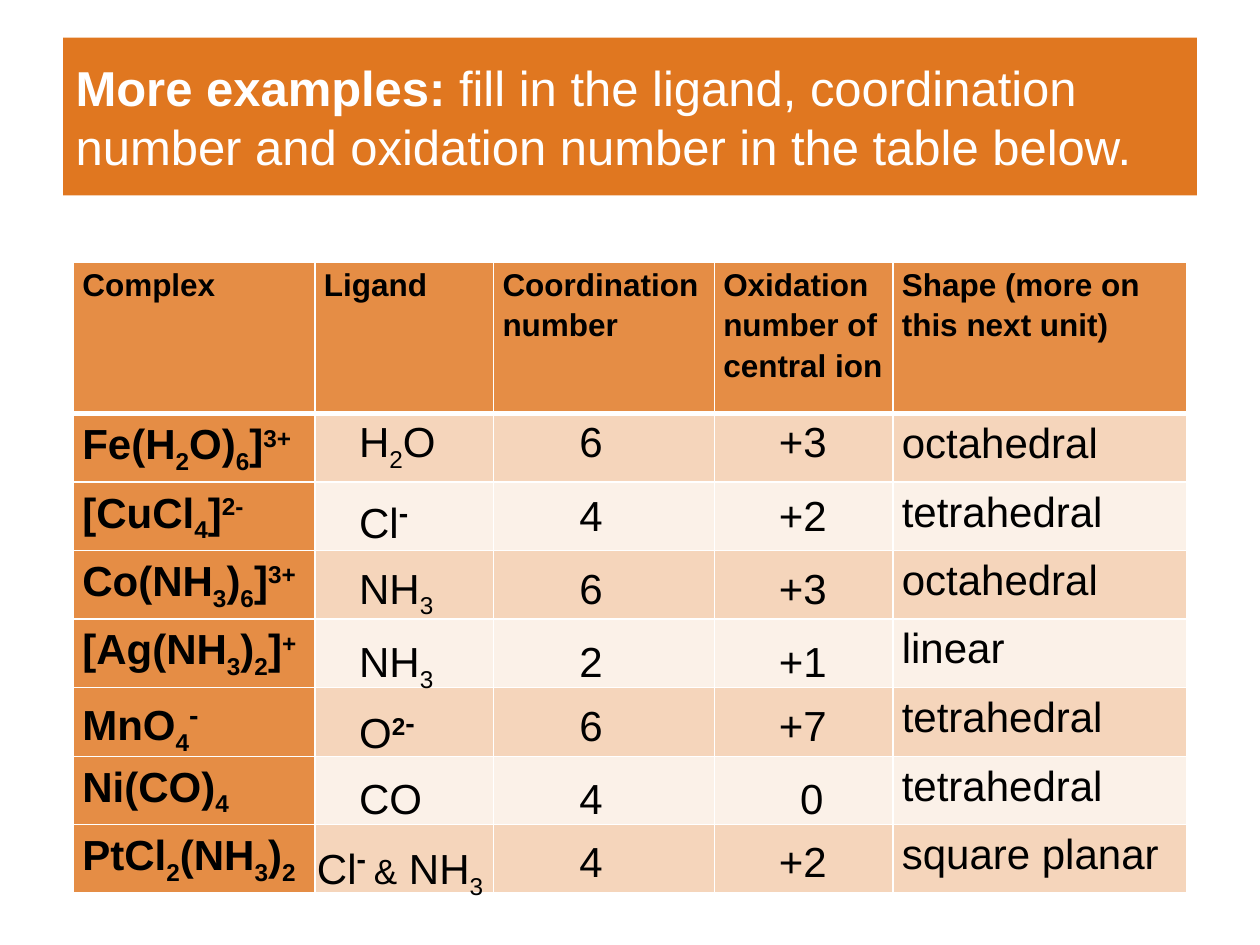
from dataclasses import dataclass

from lxml.etree import Element, SubElement
from pptx import Presentation
from pptx.dml.color import RGBColor as Rgb
from pptx.enum.text import MSO_ANCHOR as Anchor, MSO_AUTO_SIZE as Fit, PP_ALIGN as Align
from pptx.oxml.ns import qn
from pptx.util import Cm, Pt


@dataclass(frozen=True)
class Theme:
    font: str = "Arial"
    accent: str = "E07720"
    white: str = "FFFFFF"
    black: str = "000000"
    title: int = 28
    head: int = 18
    body: int = 24
    sign: int = 28
    small: int = 20
    strong: int = 83
    bands: tuple = (30, 10)


THEME = Theme()
# Marks that open a piece of a formula: size, bold, baseline shift in percent
MARKS = {
    "_": (THEME.body, None, -25),
    "^": (THEME.body, True, 30),
    "~": (THEME.sign, True, 30),
    "<": (THEME.small, None, 0),
}
HEADS = ["Complex", "Ligand", "Coordination number",
         "Oxidation number of central ion",
         "Shape (more on\nthis next unit)"]
# Complex, ligand, coordination number, oxidation number, shape
ROWS = [
    ("Fe(H|_2|O)|_6|]|^3+", "H|_2|O", "6", "+3", "octahedral"),
    ("[CuCl|_4|]|^2-", "Cl|~-", "4", "+2", "tetrahedral"),
    ("Co(NH|_3|)|_6|]|^3+", "NH|_3", "6", "+3", "octahedral"),
    ("[Ag(NH|_3|)|_2|]|^+", "NH|_3", "2", "+1", "linear"),
    ("MnO|_4|~-", "O|^2|~-", "6", "+7", "tetrahedral"),
    ("Ni(CO)|_4", "CO", "4", "0", "tetrahedral"),
    ("PtCl|_2|(NH|_3|)|_2", "Cl|~- |<&| NH|_3", "4", "+2", "square planar"),
]
WIDTHS = [4.87, 3.6, 4.45, 3.6, 5.92]
HEAD_H, ROW_H = 3.05, 1.38
TOPS = [8.26, 9.74, 11.21, 12.69, 13.97, 15.45, 16.72]


def style(run, size, bold=False, color=THEME.black, shift=0):
    font = run.font
    font.name, font.size, font.bold = THEME.font, Pt(size), bold
    font.color.rgb = Rgb.from_string(color)
    if shift:
        run._r.get_or_add_rPr().set("baseline", str(shift * 1000))


def write(para, text, size=THEME.body, bold=False):
    """Add the pieces between bars, each styled by its leading mark."""
    for piece in text.split("|"):
        mark = MARKS.get(piece[0])
        run = para.add_run()
        run.text = piece[1:] if mark else piece
        if mark:
            style(run, mark[0], bold or bool(mark[1]), shift=mark[2])
        else:
            style(run, size, bold)


def add_edge(props, index, side, width):
    line = Element(qn(f"a:ln{side}"), w=str(Pt(width)))
    fill = SubElement(line, qn("a:solidFill"))
    SubElement(fill, qn("a:srgbClr"), val=THEME.white)
    props.insert(index, line)


def paint(cell, alpha, top=1, base=1):
    """Fill a cell with the accent at alpha percent and give it white edges."""
    cell.fill.solid()
    cell.fill.fore_color.rgb = Rgb.from_string(THEME.accent)
    props = cell._tc.get_or_add_tcPr()
    tint = props.find(qn("a:solidFill")).find(qn("a:srgbClr"))
    SubElement(tint, qn("a:alpha"), val=str(alpha * 1000))
    for index, (side, width) in enumerate(zip("LRTB", (1, 1, top, base))):
        add_edge(props, index, side, width)
    cell.margin_left = cell.margin_right = Cm(0.18)
    cell.margin_top = cell.margin_bottom = 0


def fill_cell(cell, text, size=THEME.body, bold=False):
    frame = cell.text_frame
    for index, line in enumerate(text.split("\n")):
        para = frame.add_paragraph() if index else frame.paragraphs[0]
        para.line_spacing = 1.15
        write(para, line, size, bold)


def add_title(slide):
    title = slide.shapes.title
    title.left, title.top, title.width, title.height = Cm(1.27), Cm(0.76), Cm(22.86), Cm(3.18)
    title.fill.solid()
    title.fill.fore_color.rgb = Rgb.from_string(THEME.accent)
    frame = title.text_frame
    frame.vertical_anchor, frame.auto_size = Anchor.MIDDLE, Fit.NONE
    para = frame.paragraphs[0]
    para.alignment = Align.LEFT
    parts = ("More examples:",
             " fill in the ligand, coordination number and oxidation number in the table below.")
    for text, bold in zip(parts, (True, False)):
        run = para.add_run()
        run.text = text
        style(run, THEME.title, bold, THEME.white)


def add_grid(slide):
    table = slide.shapes.add_table(
        len(ROWS) + 1, len(WIDTHS), Cm(1.48), Cm(5.29),
        Cm(sum(WIDTHS)), Cm(HEAD_H + ROW_H * len(ROWS))).table
    for col, width in zip(table.columns, WIDTHS):
        col.width = Cm(width)
    for index, row in enumerate(table.rows):
        row.height = Cm(ROW_H if index else HEAD_H)
    for col, text in enumerate(HEADS):
        cell = table.cell(0, col)
        paint(cell, THEME.strong, base=3)
        fill_cell(cell, text, THEME.head, True)
    for index, row in enumerate(ROWS):
        for col in range(len(WIDTHS)):
            alpha = THEME.bands[index % 2] if col else THEME.strong
            paint(table.cell(index + 1, col), alpha, top=1 if index else 3)
        fill_cell(table.cell(index + 1, 0), row[0], bold=True)
        fill_cell(table.cell(index + 1, 4), row[4])


def add_answer(slide, text, left, top, width):
    box = slide.shapes.add_textbox(Cm(left), Cm(top), Cm(width), Cm(1.28))
    frame = box.text_frame
    frame.word_wrap, frame.auto_size = True, Fit.SHAPE_TO_FIT_TEXT
    write(frame.paragraphs[0], text)


def add_answers(slide):
    for top, (_, ligand, coord, charge, _) in zip(TOPS, ROWS):
        wide = "&" in ligand
        add_answer(slide, ligand, 6.14 if wide else 6.99, top, 5.08 if wide else 2.96)
        add_answer(slide, coord, 11.43, top, 1.27)
        add_answer(slide, charge, 15.88 if charge == "0" else 15.45, top, 1.5)


def main():
    deck = Presentation()
    deck.slide_width, deck.slide_height = Cm(25.4), Cm(19.05)
    slide = deck.slides.add_slide(deck.slide_layouts[5])
    add_title(slide)
    add_grid(slide)
    add_answers(slide)
    deck.save("out.pptx")


if __name__ == "__main__":
    main()
